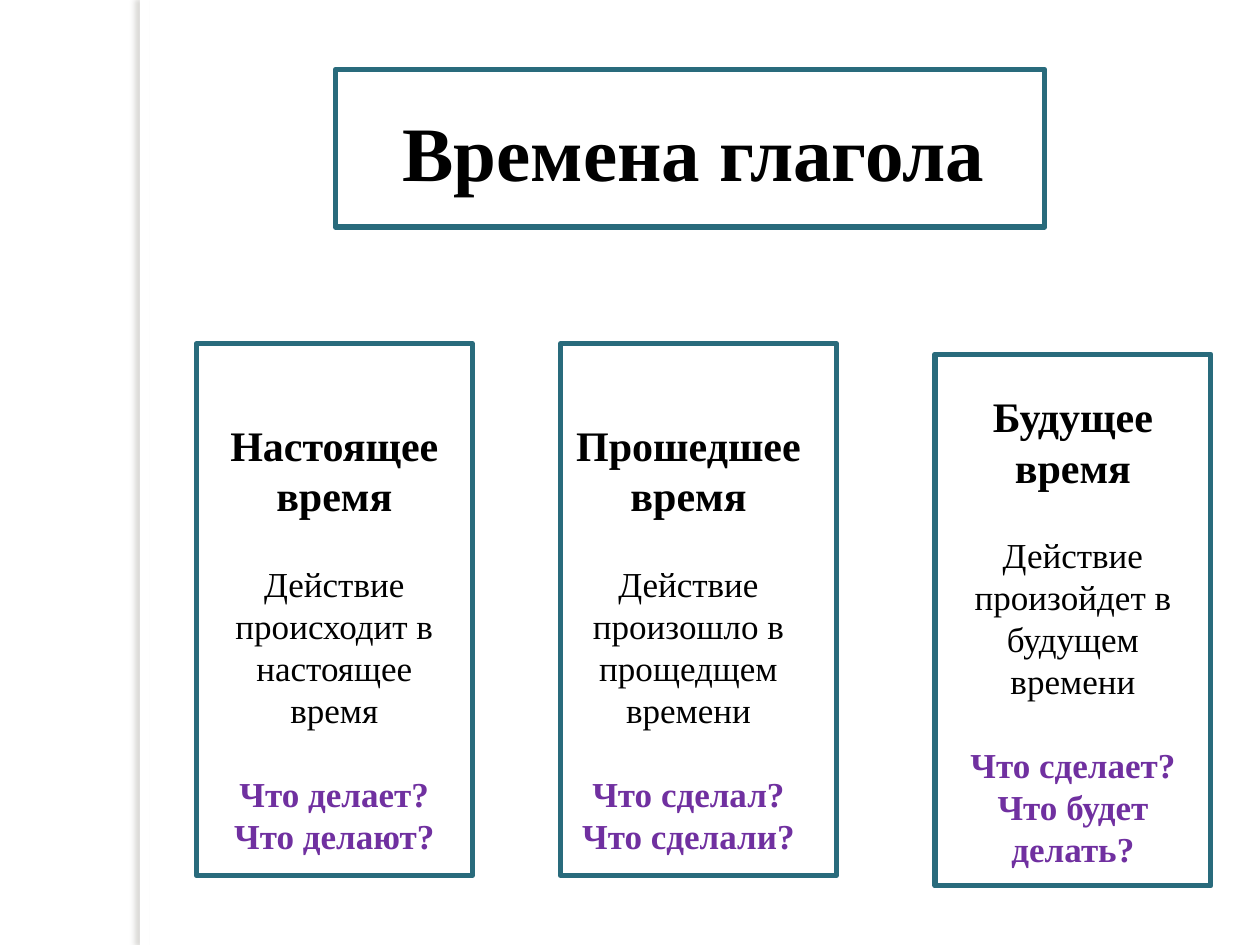
from dataclasses import dataclass

from lxml import etree
from pptx import Presentation
from pptx import util as u
from pptx.dml.color import RGBColor
from pptx.enum import shapes, text
from pptx.oxml import ns


@dataclass(frozen=True)
class Theme:
    font: str = "Times New Roman"
    ink: str = "000000"
    accent: str = "7030A0"
    border: str = "296B7C"
    paper: str = "FFFFFF"
    shadow: str = "736F63"
    title_size: int = 44
    heading_size: int = 24
    body_size: int = 20
    border_width: int = 3


THEME = Theme()

# Frame left and top, text offset inside the frame, text height,
# heading, explanation, questions (lengths in centimetres)
CARDS = [
    (3.96, 6.93, (0.2, 1.4), 9.14, "Настоящее время",
     ["Действие происходит в настоящее время"],
     ["Что делает?", "Что делают?"]),
    (11.3, 6.93, (0, 1.4), 9.14, "Прошедшее время",
     ["Действие произошло в прощедщем", "времени"],
     ["Что сделал?", "Что сделали?"]),
    (18.85, 7.14, (0.2, 0.61), 10.01, "Будущее время",
     ["Действие произойдет в будущем", "времени"],
     ["Что сделает?", "Что будет делать?"]),
]
CARD_WIDTH, CARD_HEIGHT, CARD_TEXT_WIDTH = 5.56, 10.72, 5.16


def add_rectangle(page, left, top, width, height):
    box = page.shapes.add_shape(
        shapes.MSO_SHAPE.RECTANGLE,
        u.Cm(left), u.Cm(top), u.Cm(width), u.Cm(height))
    box.shadow.inherit = False
    return box


def add_frame(page, left, top, width, height):
    """Outlined rectangle with rounded line joins."""
    box = add_rectangle(page, left, top, width, height)
    box.fill.background()
    box.line.color.rgb = RGBColor.from_string(THEME.border)
    box.line.width = u.Pt(THEME.border_width)
    etree.SubElement(box.line._get_or_add_ln(), ns.qn("a:round"))


def add_text_box(page, left, top, width, height):
    box = page.shapes.add_textbox(
        u.Cm(left), u.Cm(top), u.Cm(width), u.Cm(height))
    box.text_frame.word_wrap = True
    box.text_frame.auto_size = text.MSO_AUTO_SIZE.SHAPE_TO_FIT_TEXT
    return box.text_frame


def write(frame, words, size, color=THEME.ink, bold=False, before=0):
    """Write a centred paragraph, reusing the first one while it is empty."""
    first = frame.paragraphs[0]
    para = frame.add_paragraph() if first.runs else first
    para.alignment = text.PP_ALIGN.CENTER
    if before:
        para.space_before = u.Pt(before)
    span = para.add_run()
    span.text = words
    span.font.name = THEME.font
    span.font.size = u.Pt(size)
    span.font.bold = bold
    span.font.color.rgb = RGBColor.from_string(color)


def add_side_strip(page, left, top, width, height):
    """Plain strip that casts a soft shadow to its left."""
    strip = add_rectangle(page, left, top, width, height)
    strip.fill.solid()
    strip.fill.fore_color.rgb = RGBColor.from_string(THEME.paper)
    strip.line.fill.background()
    effects = strip._element.spPr.find(ns.qn("a:effectLst"))
    shadow = etree.SubElement(
        effects, ns.qn("a:outerShdw"), blurRad=str(u.Pt(3)),
        dist=str(u.Pt(3)), dir=str(180 * 60000), algn="tl", rotWithShape="0")
    color = etree.SubElement(shadow, ns.qn("a:srgbClr"), val=THEME.shadow)
    etree.SubElement(color, ns.qn("a:alpha"), val="25000")


def add_title(page, left, top, width, height):
    add_frame(page, left, top, width, height)
    frame = add_text_box(page, left + 0.38, top + 0.58, width - 0.61, 2.13)
    write(frame, "Времена глагола", THEME.title_size, bold=True)


def add_card(page, left, top, offset, text_height, heading, body, questions):
    add_frame(page, left, top, CARD_WIDTH, CARD_HEIGHT)
    frame = add_text_box(page, left + offset[0], top + offset[1],
                         CARD_TEXT_WIDTH, text_height)
    write(frame, heading, THEME.heading_size, bold=True)
    gap = THEME.body_size * 1.2
    for lines, color, bold in ((body, THEME.ink, False),
                               (questions, THEME.accent, True)):
        for index, line in enumerate(lines):
            write(frame, line, THEME.body_size, color=color, bold=bold,
                  before=0 if index else gap)


def main():
    deck = Presentation()
    deck.slide_width, deck.slide_height = u.Cm(25.4), u.Cm(19.05)
    page = deck.slides.add_slide(deck.slide_layouts[6])
    add_side_strip(page, 2.82, 0, 0.2, 19.05)
    add_title(page, 6.76, 1.4, 14.3, 3.18)
    for card in CARDS:
        add_card(page, *card)
    deck.save("out.pptx")


if __name__ == "__main__":
    main()
